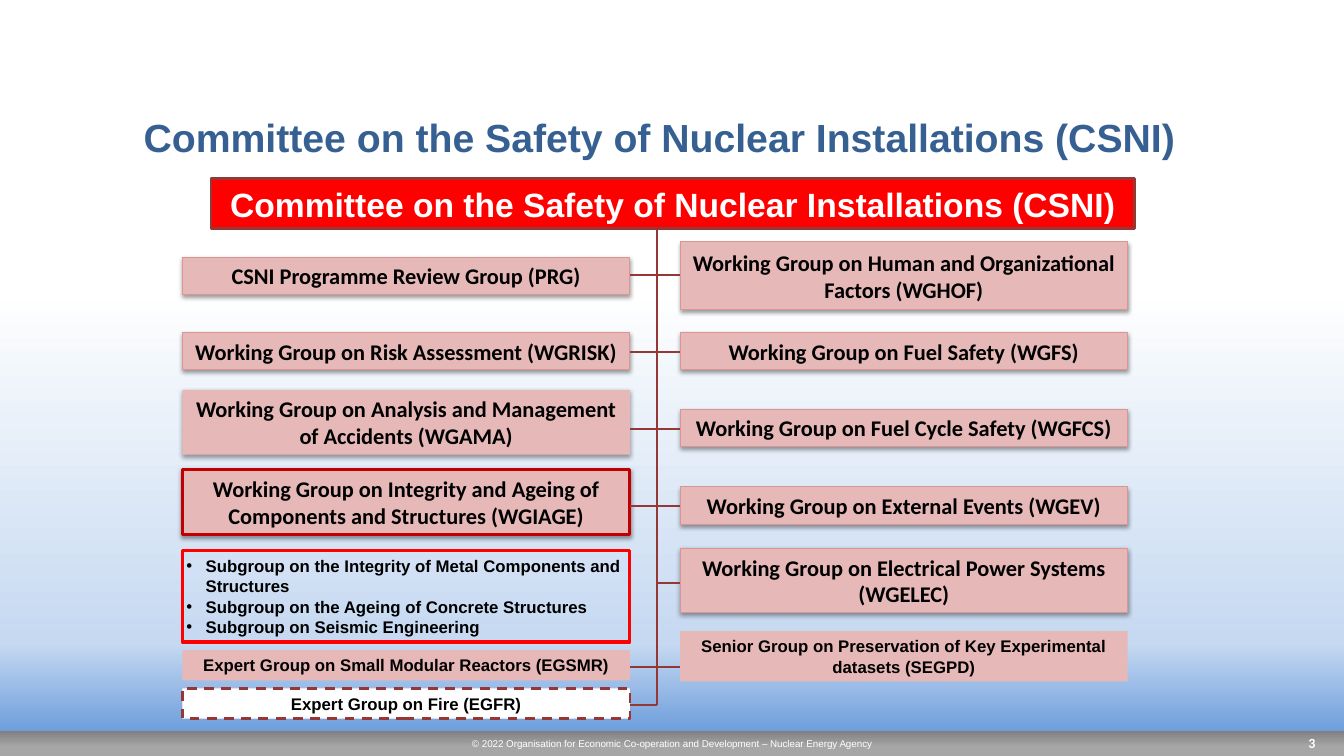
"""Build the slide that charts the CSNI committee and its working groups."""
from dataclasses import dataclass

from lxml import etree
from pptx import Presentation
from pptx import util as u
from pptx.dml.color import RGBColor
from pptx.enum import dml, shapes, text
from pptx.oxml import ns

COLOURS = {
    "white": "FFFFFF", "black": "000000", "title": "376092", "red": "FF0000",
    "dark_red": "953735", "crimson": "C00000", "pink": "E6B9B8", "rose": "D99694",
    "pale_blue": "C6D9F1", "blue": "558ED5", "grey": "808080", "light_grey": "A6A6A6",
}
SLIDE_WIDTH, SLIDE_HEIGHT = u.Inches(13.33), u.Inches(7.5)

# Shares of the slide's width or height, in percent.
LEFT_COLUMN, RIGHT_COLUMN, COLUMN_WIDTH = 13.57, 50.6, 33.3
LEFT_EDGE = LEFT_COLUMN + COLUMN_WIDTH
TRUNK, TRUNK_TOP, TRUNK_BOTTOM = 48.86, 30.13, 93.3
FIRST_ROW, ROW_PITCH, EXPERT_ROW = 36.4, 10.17, 88.2
ONE_LINE, TWO_LINES, SMALL_LINE = 4.93, 8.53, 4
FOOTER_TOP, FOOTER_HEIGHT = 96.67, 3.33
COMMITTEE = "Committee on the Safety of Nuclear Installations (CSNI)"


@dataclass(frozen=True)
class Box:
    """A text rectangle placed by shares of the slide."""
    words: str
    left: float
    top: float
    width: float
    height: float
    size: float = 16
    font: str = "Calibri"
    ink: str = "black"
    fill: str | None = "pink"
    line: str | None = None
    weight: float = 0.75
    shadow: bool = False
    dashed: bool = False
    bulleted: bool = False
    bold: bool = True
    grow: bool = True
    anchor: text.MSO_ANCHOR = text.MSO_ANCHOR.MIDDLE


@dataclass(frozen=True)
class Link:
    """A straight line between two points given as shares of the slide."""
    start_x: float
    start_y: float
    end_x: float
    end_y: float


def group(words: str, left: float, top: float, height: float = ONE_LINE,
          line: str | None = "rose", weight: float = 0.75) -> Box:
    """Describe a working group in one of the two columns."""
    return Box(words, left, top, COLUMN_WIDTH, height, line=line, weight=weight, shadow=True)


def small_group(words: str, left: float, top: float, height: float = SMALL_LINE, **style) -> Box:
    """Describe an expert group, senior group or list of subgroups."""
    return Box(words, left, top, COLUMN_WIDTH, height, size=12, font="Arial", **style)


FOOTER = Box("© 2022 Organisation for Economic Co-operation and Development – Nuclear Energy Agency",
             0, FOOTER_TOP, 100, FOOTER_HEIGHT, 7, "Arial", "white", "grey", bold=False, grow=False)
BOXES = [
    Box(COMMITTEE, 4.35, 14.4, 89.4, 3.6, 28, "Arial", "title", None, grow=False,
        anchor=text.MSO_ANCHOR.TOP),
    Box(COMMITTEE, 15.7, 23.6, 68.7, 6.67, 24, "Arial", "white", "red", "dark_red", 2),
    group("CSNI Programme Review Group (PRG)", LEFT_COLUMN, 34),
    group("Working Group on Risk Assessment (WGRISK)", LEFT_COLUMN, 44),
    group("Working Group on Analysis and Management of Accidents (WGAMA)",
          LEFT_COLUMN, 51.6, TWO_LINES, None),
    group("Working Group on Integrity and Ageing of Components and Structures (WGIAGE)",
          LEFT_COLUMN, 62.13, TWO_LINES, "crimson", 2.25),
    group("Working Group on Human and Organizational Factors (WGHOF)", RIGHT_COLUMN, 32, 8.93),
    group("Working Group on Fuel Safety (WGFS)", RIGHT_COLUMN, 44),
    group("Working Group on Fuel Cycle Safety (WGFCS)", RIGHT_COLUMN, 54.13),
    group("Working Group on External Events (WGEV)", RIGHT_COLUMN, 64.4),
    group("Working Group on Electrical Power Systems (WGELEC)", RIGHT_COLUMN, 72.53, TWO_LINES),
    small_group("Subgroup on the Integrity of Metal Components and Structures\n"
                "Subgroup on the Ageing of Concrete Structures\n"
                "Subgroup on Seismic Engineering",
                LEFT_COLUMN, 72.8, 12.13, fill=None, line="red", weight=2.25, bulleted=True),
    small_group("Expert Group on Small Modular Reactors (EGSMR)", LEFT_COLUMN, 86),
    small_group("Expert Group on Fire (EGFR)", LEFT_COLUMN, 91.07,
                fill="white", line="dark_red", weight=1.75, dashed=True),
    small_group("Senior Group on Preservation of Key Experimental datasets (SEGPD)",
                RIGHT_COLUMN, 83.47, 6.67),
    Box("3", 95.25, FOOTER_TOP, 4.72, FOOTER_HEIGHT, 10, ink="white", fill=None, grow=False),
]
ROWS = [FIRST_ROW + ROW_PITCH * index for index in range(5)]
LINKS = [
    Link(TRUNK, TRUNK_TOP, TRUNK, TRUNK_BOTTOM),
    *(Link(LEFT_EDGE, row, RIGHT_COLUMN, row) for row in [*ROWS[:4], EXPERT_ROW]),
    Link(TRUNK, ROWS[4], RIGHT_COLUMN, ROWS[4]),
    Link(LEFT_EDGE, TRUNK_BOTTOM, TRUNK, TRUNK_BOTTOM),
]


def across(share: float) -> int:
    """Turn a share of the slide's width into a length."""
    return round(SLIDE_WIDTH * share / 100)


def down(share: float) -> int:
    """Turn a share of the slide's height into a length."""
    return round(SLIDE_HEIGHT * share / 100)


def colour(name: str) -> RGBColor:
    """Look up a named colour."""
    return RGBColor.from_string(COLOURS[name])


def add(parent, tag: str, **attributes: str):
    """Append a DrawingML element to its parent."""
    return etree.SubElement(parent, ns.qn(f"a:{tag}"), attributes)


def paint_gradient(fill, element, stops: list[tuple[int, str]]) -> None:
    """Fill an element from top to bottom through the given stops."""
    fill.gradient()
    gradient = element.find(f".//{ns.qn('a:gradFill')}")
    for child in list(gradient):
        gradient.remove(child)
    stop_list = add(gradient, "gsLst")
    for share, name in stops:
        add(add(stop_list, "gs", pos=str(share * 1000)), "srgbClr", val=COLOURS[name])
    add(gradient, "lin", ang="5400000", scaled="0")


def cast_shadow(shape) -> None:
    """Give a shape a soft shadow below it."""
    effects = shape.element.spPr.find(ns.qn("a:effectLst"))
    shadow = add(effects, "outerShdw", blurRad="40000", dist="20000", dir="5400000", rotWithShape="0")
    add(add(shadow, "srgbClr", val=COLOURS["black"]), "alpha", val="38000")


def write_text(shape, box: Box) -> None:
    """Write and format the words of a box."""
    frame = shape.text_frame
    frame.text = box.words
    frame.word_wrap = True
    frame.vertical_anchor = box.anchor
    frame.auto_size = (text.MSO_AUTO_SIZE.SHAPE_TO_FIT_TEXT if box.grow
                       else text.MSO_AUTO_SIZE.NONE)
    if box.bulleted:
        frame.margin_left = frame.margin_right = u.Inches(0.04)
    for paragraph in frame.paragraphs:
        paragraph.alignment = text.PP_ALIGN.LEFT if box.bulleted else text.PP_ALIGN.CENTER
        if box.bulleted:
            properties = paragraph._p.get_or_add_pPr()
            properties.set("marL", str(u.Inches(0.19)))
            properties.set("indent", str(-u.Inches(0.19)))
            add(properties, "buFont", typeface="Arial")
            add(properties, "buChar", char="•")
        for run in paragraph.runs:
            run.font.name, run.font.size, run.font.bold = box.font, u.Pt(box.size), box.bold
            run.font.color.rgb = colour(box.ink)


def draw_box(slide, box: Box):
    """Draw a box and return its shape."""
    shape = slide.shapes.add_shape(shapes.MSO_SHAPE.RECTANGLE, across(box.left), down(box.top),
                                   across(box.width), down(box.height))
    shape.shadow.inherit = False
    if box.fill:
        shape.fill.solid()
        shape.fill.fore_color.rgb = colour(box.fill)
    else:
        shape.fill.background()
    if box.line:
        shape.line.color.rgb = colour(box.line)
        shape.line.width = u.Pt(box.weight)
    else:
        shape.line.fill.background()
    if box.dashed:
        shape.line.dash_style = dml.MSO_LINE.DASH
    if box.shadow:
        cast_shadow(shape)
    write_text(shape, box)
    return shape


def draw_link(slide, link: Link) -> None:
    """Draw a line of the tree."""
    connector = slide.shapes.add_connector(shapes.MSO_CONNECTOR.STRAIGHT, across(link.start_x),
                                           down(link.start_y), across(link.end_x), down(link.end_y))
    connector.line.color.rgb = colour("dark_red")
    connector.line.width = u.Pt(1.5)
    add(connector.element.spPr, "effectLst")


def main() -> None:
    """Build and save the slide."""
    presentation = Presentation()
    presentation.slide_width, presentation.slide_height = SLIDE_WIDTH, SLIDE_HEIGHT
    slide = presentation.slides.add_slide(presentation.slide_layouts[6])
    paint_gradient(slide.background.fill, slide.element,
                   [(0, "white"), (38, "white"), (85, "pale_blue"), (100, "blue")])
    footer = draw_box(slide, FOOTER)
    paint_gradient(footer.fill, footer.element, [(0, "grey"), (64, "light_grey")])
    for box in BOXES:
        draw_box(slide, box)
    for link in LINKS:
        draw_link(slide, link)
    presentation.save("out.pptx")


if __name__ == "__main__":
    main()
